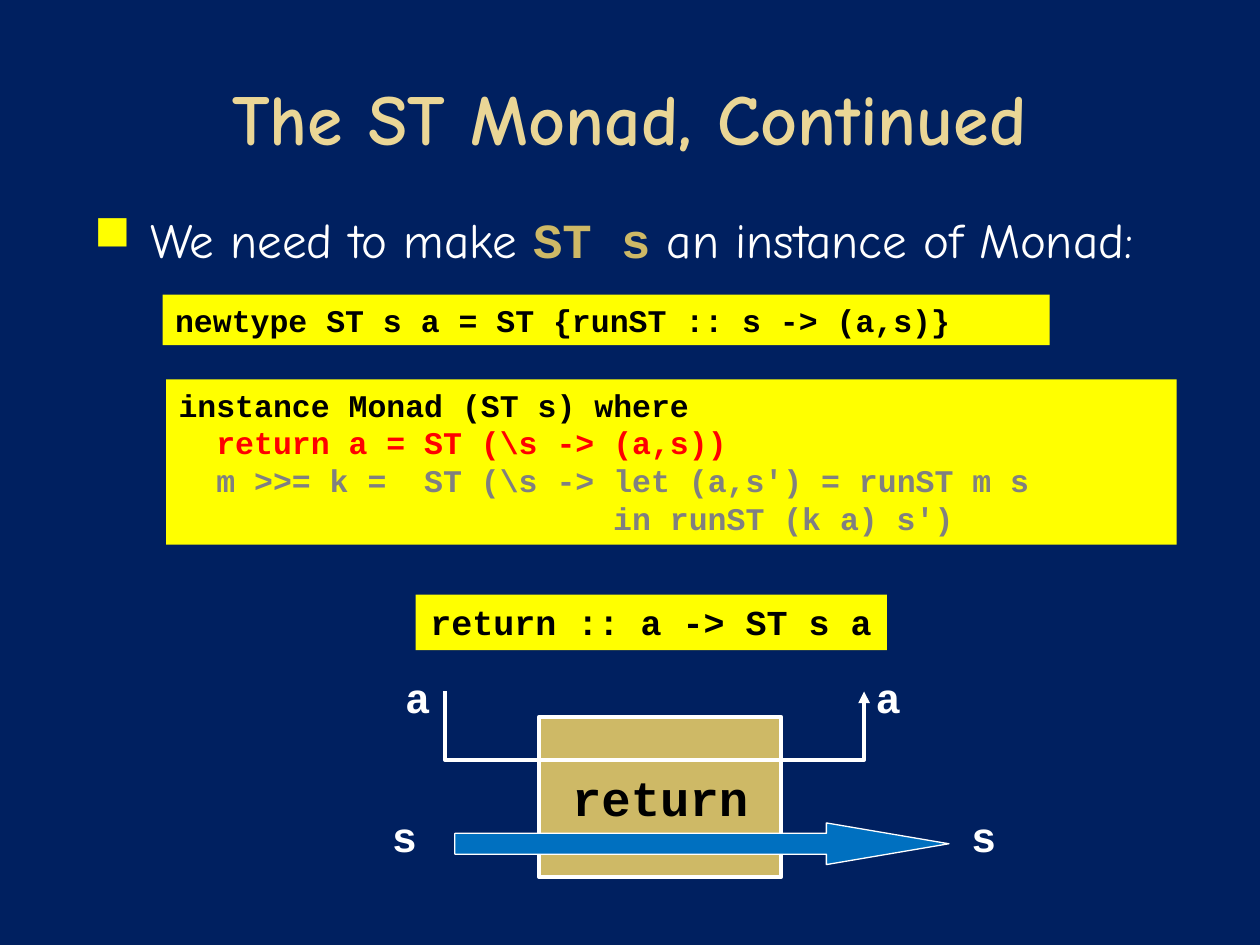
import pptx
import pptx.dml.color
import pptx.enum.shapes
import pptx.enum.text
import pptx.oxml
import pptx.oxml.ns
import pptx.util

Cm = pptx.util.Cm
Pt = pptx.util.Pt
ALIGN = pptx.enum.text.PP_ALIGN
ANCHOR = pptx.enum.text.MSO_ANCHOR
SHAPE = pptx.enum.shapes.MSO_SHAPE
NAMESPACE = pptx.oxml.ns.nsdecls("a")

NAVY, YELLOW, GOLD, CREAM = "002060", "FFFF00", "CEB966", "EAD696"
WHITE, BLACK, RED, GREY, BLUE = "FFFFFF", "000000", "FF0000", "808080", "0070C0"
PROSE, CODE = "Comic Neue", "Courier New"
CODE_CHAR_CM = 0.381


def paint(color_format, hex_color):
    color_format.rgb = pptx.dml.color.RGBColor.from_string(hex_color)


def write(paragraph, text, size=18, font=CODE, color=BLACK, bold=True, align=ALIGN.LEFT):
    paragraph.alignment = align
    run = paragraph.add_run()
    run.text = text
    run.font.size = Pt(size)
    run.font.name = font
    run.font.bold = bold
    run.font.fill.solid()
    paint(run.font.fill.fore_color, color)


deck = pptx.Presentation()
deck.slide_width, deck.slide_height = Cm(25.4), Cm(19.05)
slide = deck.slides.add_slide(deck.slide_layouts[5])
slide.background.fill.solid()
paint(slide.background.fill.fore_color, NAVY)

title = slide.shapes.title
title.left, title.top, title.width, title.height = Cm(1.27), Cm(0.76), Cm(22.86), Cm(3.18)
title.text_frame.vertical_anchor = ANCHOR.MIDDLE
write(title.text_frame.paragraphs[0], "The ST Monad, Continued",
      size=41, font=PROSE, color=CREAM, align=ALIGN.CENTER)

statement = slide.shapes.add_textbox(Cm(1.27), Cm(4.09), Cm(22.86), Cm(13.08))
statement.text_frame.word_wrap = True
bullet = statement.text_frame.paragraphs[0]
write(bullet, "We need to make ", size=28, font=PROSE, color=WHITE, bold=False)
write(bullet, "ST s", size=28, color=GOLD)
write(bullet, " an instance of Monad:", size=28, font=PROSE, color=WHITE, bold=False)
bullet_format = bullet._p.get_or_add_pPr()
bullet_format.set("marL", str(Cm(1.52)))
bullet_format.set("indent", str(Cm(-1.14)))
for tag in (f'<a:buClr {NAMESPACE}><a:srgbClr val="{YELLOW}"/></a:buClr>',
            f'<a:buChar {NAMESPACE} char="■"/>'):
    bullet_format.append(pptx.oxml.parse_xml(tag))

instance_lines = [
    (0, "instance Monad (ST s) where", BLACK),
    (2, "return a = ST (\\s -> (a,s))", RED),
    (2, "m >>= k =  ST (\\s -> let (a,s') = runST m s", GREY),
    (23, "in runST (k a) s')", GREY),
]
newtype_lines = [(0, "newtype ST s a = ST {runST :: s -> (a,s)}", BLACK)]
signature_lines = [(0, "return :: a -> ST s a", BLACK)]
return_lines = [(0, "return", BLACK)]

code_boxes = [
    (3.35, 7.65, 20.37, 3.33, YELLOW, None, 18, ALIGN.LEFT, ANCHOR.TOP, instance_lines),
    (3.28, 5.94, 17.88, 1.02, YELLOW, None, 18, ALIGN.LEFT, ANCHOR.TOP, newtype_lines),
    (8.38, 11.99, 9.5, 1.12, YELLOW, None, 20, ALIGN.CENTER, ANCHOR.TOP, signature_lines),
    (10.87, 14.45, 4.88, 3.23, GOLD, WHITE, 28, ALIGN.CENTER, ANCHOR.MIDDLE, return_lines),
]
for left, top, width, height, fill, outline, size, align, anchor, lines in code_boxes:
    box = slide.shapes.add_shape(SHAPE.RECTANGLE, Cm(left), Cm(top), Cm(width), Cm(height))
    box.shadow.inherit = False
    box.fill.solid()
    paint(box.fill.fore_color, fill)
    if outline:
        paint(box.line.color, outline)
        box.line.width = Pt(2.25)
    else:
        box.line.fill.background()
    box.text_frame.word_wrap = align == ALIGN.LEFT
    box.text_frame.vertical_anchor = anchor
    for number, (indent, text, color) in enumerate(lines):
        line = box.text_frame.add_paragraph() if number else box.text_frame.paragraphs[0]
        write(line, text, size=size, color=color, align=align)
        if indent:
            line._p.get_or_add_pPr().set("marL", str(Cm(indent * CODE_CHAR_CM)))

state_arrow = slide.shapes.add_shape(SHAPE.RIGHT_ARROW, Cm(9.17), Cm(16.59), Cm(9.96), Cm(0.84))
state_arrow.adjustments[0] = 0.5
state_arrow.adjustments[1] = 2.94
state_arrow.shadow.inherit = False
state_arrow.fill.solid()
paint(state_arrow.fill.fore_color, BLUE)
paint(state_arrow.line.color, WHITE)
state_arrow.line.width = Pt(0.75)

value_route = slide.shapes.build_freeform(Cm(8.97), Cm(13.94))
value_route.add_line_segments(
    [(Cm(8.97), Cm(15.32)), (Cm(17.42), Cm(15.32)), (Cm(17.42), Cm(13.94))], close=False)
value_path = value_route.convert_to_shape()
value_path.shadow.inherit = False
value_path.fill.background()
paint(value_path.line.color, WHITE)
value_path.line.width = Pt(2.25)
value_path.line._get_or_add_ln().append(
    pptx.oxml.parse_xml(f'<a:tailEnd {NAMESPACE} type="triangle"/>'))

for label, left, top in [("s", 19.33, 16.21), ("a", 7.92, 13.41),
                         ("a", 17.4, 13.41), ("s", 7.65, 16.21)]:
    end_label = slide.shapes.add_textbox(Cm(left), Cm(top), Cm(1.3), Cm(1.27))
    end_label.text_frame.word_wrap = True
    write(end_label.text_frame.paragraphs[0], label, size=24, color=WHITE)

deck.save("out.pptx")
